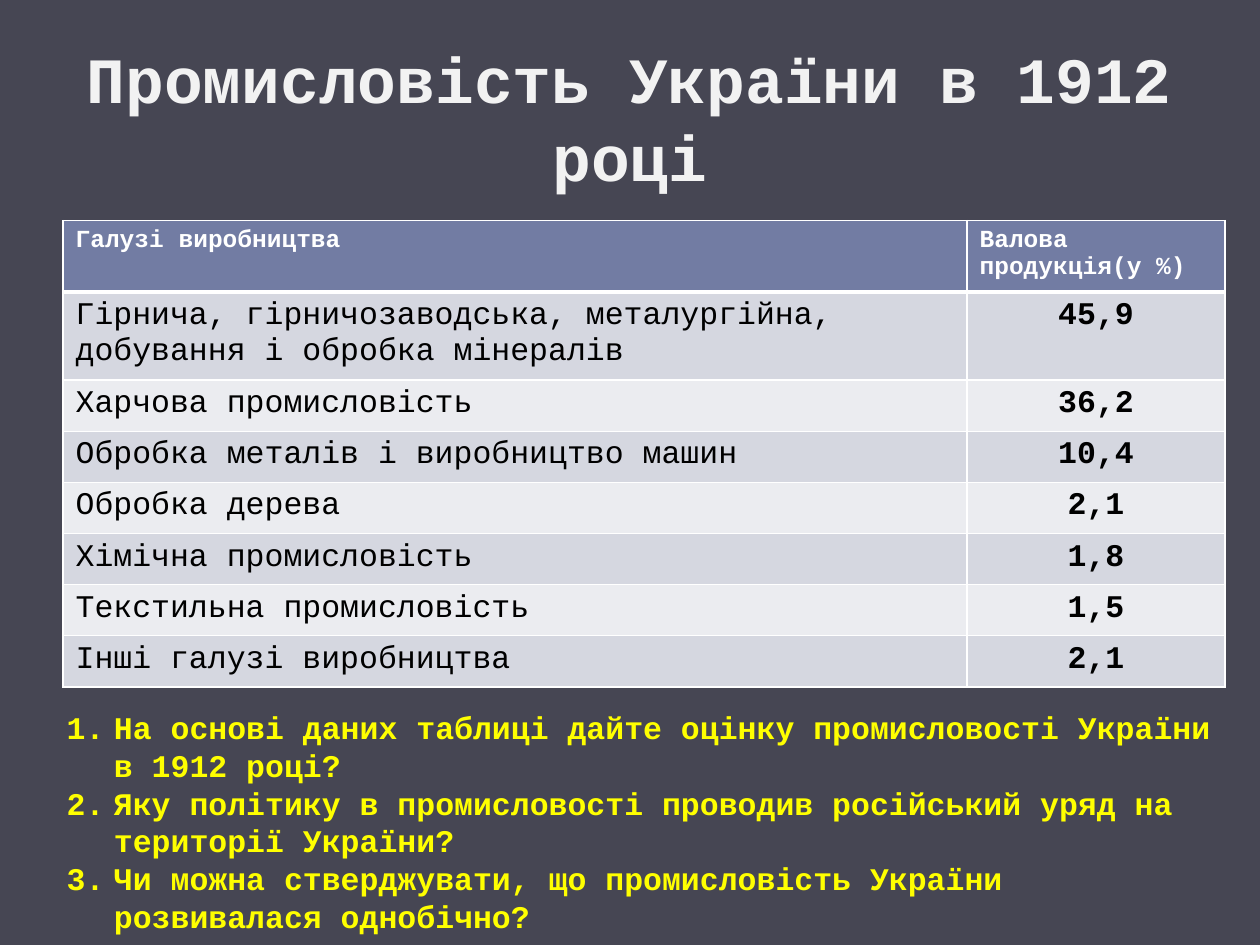
from pptx import Presentation
from pptx import util as u
from pptx.dml.color import RGBColor
from pptx.enum import text
from pptx.oxml.ns import qn
from lxml import etree

BACKGROUND = RGBColor(0x46, 0x46, 0x53)
TITLE_COLOR = RGBColor(0xF2, 0xF2, 0xF2)
WHITE = RGBColor(0xFF, 0xFF, 0xFF)
BLACK = RGBColor(0, 0, 0)
YELLOW = RGBColor(0xFF, 0xFF, 0)
HEADER_FILL = RGBColor(0x72, 0x7C, 0xA3)
BANDS = (RGBColor(0xD5, 0xD7, 0xE0), RGBColor(0xEB, 0xEC, 0xF0))

TITLE = "Промисловість України в 1912 році"
HEADER = ("Галузі виробництва", "Валова продукція(у %)")
INDUSTRIES = [
    ("Гірнича, гірничозаводська, металургійна, добування і обробка мінералів", "45,9"),
    ("Харчова промисловість", "36,2"),
    ("Обробка металів і виробництво машин", "10,4"),
    ("Обробка дерева", "2,1"),
    ("Хімічна промисловість", "1,8"),
    ("Текстильна промисловість", "1,5"),
    ("Інші галузі виробництва", "2,1"),
]
QUESTIONS = [
    "На основі даних таблиці дайте оцінку промисловості України в 1912 році?",
    "Яку політику в промисловості проводив російський уряд на території України?",
    "Чи можна стверджувати, що промисловість України розвивалася однобічно?",
]


class SlideBuilder:
    font = "Courier New"

    def __init__(self, page):
        self.page = page
        page.background.fill.solid()
        page.background.fill.fore_color.rgb = BACKGROUND

    def style(self, para, size, color, bold=True, align=text.PP_ALIGN.LEFT):
        para.alignment = align
        for span in para.runs:
            span.font.name = self.font
            span.font.size = u.Pt(size)
            span.font.bold = bold
            span.font.color.rgb = color

    def text_box(self, left, top, width, height, content):
        box = self.page.shapes.add_textbox(*map(u.Pt, (left, top, width, height)))
        box.text_frame.word_wrap = True
        box.text_frame.text = content
        return box.text_frame

    def title(self, content, *place):
        frame = self.text_box(*place, content)
        frame.vertical_anchor = text.MSO_ANCHOR.MIDDLE
        self.style(frame.paragraphs[0], 36.9, TITLE_COLOR, align=text.PP_ALIGN.CENTER)

    def numbered_list(self, items, *place, indent=27):
        frame = self.text_box(*place, "\n".join(items))
        frame.auto_size = text.MSO_AUTO_SIZE.SHAPE_TO_FIT_TEXT
        for para in frame.paragraphs:
            self.style(para, 18, YELLOW)
            props = para._p.get_or_add_pPr()
            props.set("marL", str(u.Pt(indent)))
            props.set("indent", str(-u.Pt(indent)))
            etree.SubElement(props, qn("a:buFont"), typeface=self.font)
            etree.SubElement(props, qn("a:buAutoNum"), type="arabicPeriod")

    def borders(self, cell, bottom=1):
        """Draw white lines round a cell; they must precede its fill in the XML."""
        props = cell._tc.get_or_add_tcPr()
        for index, (side, width) in enumerate(
                (("lnL", 1), ("lnR", 1), ("lnT", 1), ("lnB", bottom))):
            line = etree.Element(qn(f"a:{side}"), w=str(u.Pt(width)))
            fill = etree.SubElement(line, qn("a:solidFill"))
            etree.SubElement(fill, qn("a:srgbClr"), val=str(WHITE))
            props.insert(index, line)

    def table(self, header, rows, left, top, widths, heights):
        frame = self.page.shapes.add_table(
            len(rows) + 1, len(header), u.Pt(left), u.Pt(top),
            u.Pt(sum(widths)), u.Pt(sum(heights)))
        grid = frame.table
        for column, width in zip(grid.columns, widths):
            column.width = u.Pt(width)
        for row, height in zip(grid.rows, heights):
            row.height = u.Pt(height)
        for r, values in enumerate([header, *rows]):
            for c, value in enumerate(values):
                cell = grid.cell(r, c)
                cell.text = value
                cell.fill.solid()
                cell.fill.fore_color.rgb = BANDS[(r - 1) % 2] if r else HEADER_FILL
                self.borders(cell, bottom=1 if r else 3)
                para = cell.text_frame.paragraphs[0]
                if r == 0:
                    self.style(para, 14, WHITE)
                elif c == 0:
                    self.style(para, 18, BLACK, bold=False)
                else:
                    self.style(para, 18, BLACK, align=text.PP_ALIGN.CENTER)


def main():
    deck = Presentation()
    deck.slide_width, deck.slide_height = u.Pt(720), u.Pt(540)
    builder = SlideBuilder(deck.slides.add_slide(deck.slide_layouts[6]))
    builder.title(TITLE, 36, 21.6, 648, 90)
    builder.table(HEADER, INDUSTRIES, 36, 126, (516.6, 147.4), (38.9, 48.2) + (29.2,) * 6)
    builder.numbered_list(QUESTIONS, 31, 401, 669, 138.2)
    deck.save("out.pptx")


if __name__ == "__main__":
    main()
